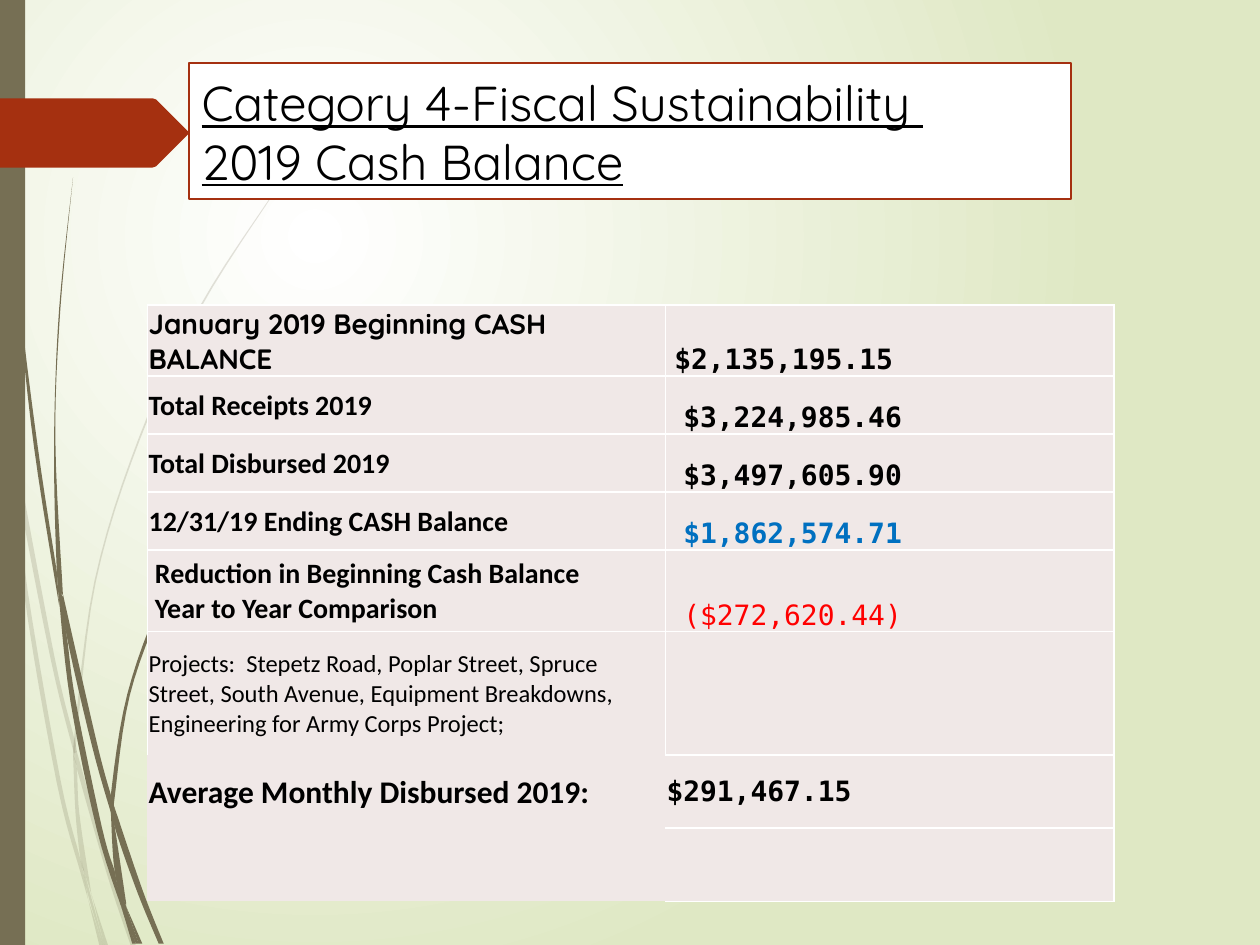
from lxml import etree
from pptx import Presentation
from pptx.dml.color import RGBColor
from pptx.enum.shapes import MSO_SHAPE
from pptx.enum.text import MSO_ANCHOR, MSO_AUTO_SIZE, PP_ALIGN
from pptx.oxml import parse_xml
from pptx.oxml.ns import nsdecls, qn
from pptx.util import Inches, Pt

RECTANGLE = MSO_SHAPE.RECTANGLE
MIDDLE, BOTTOM = MSO_ANCHOR.MIDDLE, MSO_ANCHOR.BOTTOM
LEFT = PP_ALIGN.LEFT
NO_AUTOFIT = MSO_AUTO_SIZE.NONE

COLORS = {"olive": "766F54", "rust": "A53010", "white": "FFFFFF", "black": "000000",
          "pale_green": "DFE8C4", "cell": "F0E8E7", "blue": "0070C0", "red": "FF0000"}
HEADING_FONT, BODY_FONT, NUMBER_FONT = "Quicksand", "Calibri", "DejaVu Sans Mono"

TITLE = "Category 4-Fiscal Sustainability \v2019 Cash Balance"

# Row height, label paragraphs, label format, amount, amount format
LABEL = {"font": BODY_FONT, "size": 16, "bold": True}
AMOUNT = {"font": NUMBER_FONT, "size": 16, "bold": True, "anchor": BOTTOM}
ROWS = [
    (0.54, ["January 2019 Beginning CASH BALANCE"], {**LABEL, "font": HEADING_FONT},
     " $2,135,195.15", {**AMOUNT, "space_font": HEADING_FONT}),
    (0.46, ["Total Receipts 2019"], LABEL, " $3,224,985.46", AMOUNT),
    (0.46, ["Total Disbursed 2019"], LABEL, " $3,497,605.90", AMOUNT),
    (0.46, ["12/31/19 Ending CASH Balance"], LABEL,
     " $1,862,574.71", {**AMOUNT, "color": "blue"}),
    (0.65, [" Reduction in Beginning Cash Balance", " Year to Year Comparison"], LABEL,
     " ($272,620.44)", {**AMOUNT, "color": "red", "bold": False}),
    (0.98, ["Projects:  Stepetz Road, Poplar Street, Spruce Street, South Avenue, "
            "Equipment Breakdowns, Engineering for Army Corps Project;"],
     {**LABEL, "size": 14, "bold": False}, "", AMOUNT),
    (0.58, ["Average Monthly Disbursed 2019:"], {**LABEL, "size": 18},
     "$291,467.15", {**AMOUNT, "anchor": MIDDLE}),
    (0.58, [""], LABEL, "", AMOUNT),
]
COLUMN_WIDTHS = [4.11, 3.56]
OPEN_BORDERS = {(5, 0): "B", (6, 0): "LRTB", (7, 0): "LRTB", (6, 1): "L", (7, 1): "L"}

# Each grass blade is its two edges, one down and one back up
FAINT_BLADES = [
    ([(0.08, 3.5), (0.06, 3.22), (0, 2.82)], [(0, 2.99), (0.07, 3.44), (0.08, 3.5)]),
    ([(0.1, 3.45), (0.43, 5.2), (0.59, 5.86)],
     [(0.59, 5.99), (0.4, 5.22), (0.12, 3.76), (0.1, 3.45)]),
    ([(0.61, 5.96), (0.64, 6.07), (0.88, 6.92), (1.08, 7.51)],
     [(1.04, 7.51), (0.85, 6.94), (0.61, 6.1)]),
    ([(0.73, 7.11), (0.86, 7.51)], [(0.83, 7.51), (0.73, 7.11)]),
    ([(0.08, 3.5), (0.12, 3.76), (0.22, 4.69), (0.48, 6.19), (0.64, 6.83), (0.7, 7.14)],
     [(0.64, 6.93), (0.45, 6.21), (0.19, 4.7), (0.08, 3.5)]),
    ([(0.58, 5.99), (0.61, 6.1), (0.63, 6.46), (0.72, 7.06), (0.73, 7.11)],
     [(0.67, 6.92), (0.64, 6.83), (0.6, 6.46), (0.58, 5.99)]),
    ([(0.61, 5.96), (0.61, 5.84), (0.76, 4.62), (1.11, 3.49), (1.59, 2.45), (2.17, 1.54)],
     [(2.17, 1.53), (1.58, 2.44), (1.1, 3.48), (0.75, 4.61), (0.59, 5.84), (0.61, 5.96)]),
    ([(0.7, 7.14), (0.79, 7.51)], [(0.82, 7.51), (0.7, 7.14)]),
    ([(0.61, 6.1), (0.61, 5.96), (0.59, 5.86)], [(0.58, 5.99), (0.61, 6.08)]),
    ([(0.65, 6.83), (0.69, 7.07), (0.82, 7.51)], [(0.83, 7.51), (0.67, 6.92), (0.65, 6.83)]),
]
SOLID_BLADES = [
    ([(0.02, 0), (0.05, 1.1), (0.14, 2.33), (0.27, 3.55), (0.47, 4.81)],
     [(0.45, 4.53), (0.3, 3.55), (0.15, 2.32), (0.06, 1.09), (0.03, 0)]),
    ([(0.5, 4.72), (0.53, 5.05), (0.73, 5.92), (0.88, 6.45)],
     [(0.88, 6.31), (0.77, 5.9), (0.5, 4.72)]),
    ([(0.91, 6.41), (0.91, 6.56), (1.09, 7.08), (1.26, 7.49)],
     [(1.3, 7.49), (1.13, 7.06), (0.91, 6.41)]),
    ([(0.47, 4.77), (0.56, 5.57), (0.77, 6.59), (0.97, 7.22)],
     [(0.91, 6.91), (0.81, 6.57), (0.6, 5.56), (0.53, 5.05), (0.47, 4.77)]),
    ([(0.5, 4.72), (0.44, 3.49), (0.48, 2.45), (0.58, 1.41)],
     [(0.58, 1.41), (0.47, 2.45), (0.43, 3.49), (0.45, 4.49), (0.49, 4.72)]),
    ([(1, 7.19), (1.1, 7.49)], [(1.13, 7.49), (1, 7.19)]),
    ([(0.45, 4.49), (0.47, 4.77), (0.53, 5.05)], [(0.5, 4.72), (0.49, 4.72), (0.45, 4.49)]),
    ([(0.91, 6.41), (0.91, 6.33), (1.03, 5.52), (1.31, 4.76), (1.69, 4.06), (2.16, 3.44)],
     [(2.15, 3.44), (1.68, 4.05), (1.29, 4.74), (1.01, 5.51), (0.88, 6.31), (0.91, 6.41)]),
    ([(0.97, 7.22), (1.05, 7.49)], [(1.08, 7.49), (0.97, 7.22)]),
    ([(0.88, 6.45), (0.91, 6.91), (1, 7.19)], [(1, 7.16), (0.91, 6.56), (0.88, 6.45)]),
    ([(0.88, 6.45), (0.91, 6.56)], [(0.91, 6.41), (0.88, 6.31)]),
    ([(0.91, 6.91), (0.97, 7.22), (1.08, 7.49)], [(1.1, 7.49), (1, 7.19), (0.91, 6.91)]),
]
ARROW = [(0, 0.78), (1.21, 0.78), (1.24, 0.79), (1.49, 1.04), (1.5, 1.055),
         (1.49, 1.07), (1.24, 1.32), (1.21, 1.33), (0, 1.33)]


def rgb(name):
    return RGBColor.from_string(COLORS[name])


def smooth(points, steps=6):
    """Return points on a Catmull-Rom curve through the given points."""
    padded = [points[0], *points, points[-1]]
    curve = [points[0]]
    for a, b, c, d in zip(padded, padded[1:], padded[2:], padded[3:]):
        for step in range(1, steps + 1):
            t = step / steps
            curve.append(tuple(
                (2 * q + (r - p) * t + (2 * p - 5 * q + 4 * r - s) * t ** 2
                 + (3 * q - p - 3 * r + s) * t ** 3) / 2
                for p, q, r, s in zip(a, b, c, d)))
    return curve


def paint(shape, color, opacity=100):
    shape.shadow.inherit = False
    shape.fill.solid()
    shape.fill.fore_color.rgb = rgb(color)
    shape.line.fill.background()
    if opacity < 100:
        color_element = shape._element.spPr.find(".//" + qn("a:srgbClr"))
        etree.SubElement(color_element, qn("a:alpha"), val=str(opacity * 1000))


def add_outline(shapes, points, color, opacity=100):
    corners = [(Inches(x), Inches(y)) for x, y in points]
    builder = shapes.build_freeform(*corners[0])
    builder.add_line_segments(corners[1:], close=True)
    paint(builder.convert_to_shape(), color, opacity)


def add_text(paragraph, text, font, size, color="black", bold=False, underline=False):
    paragraph.alignment = LEFT
    for index, line in enumerate(text.split("\v")):
        if index:
            paragraph.add_line_break()
        run = paragraph.add_run()
        run.text = line
        run.font.name, run.font.size = font, Pt(size)
        run.font.bold, run.font.underline = bold, underline
        run.font.color.rgb = rgb(color)


def set_borders(cell, open_sides):
    properties = cell._tc.get_or_add_tcPr()
    for index, side in enumerate("LRTB"):
        line = etree.Element(qn("a:ln" + side), w=str(Pt(1)))
        if side in open_sides:
            etree.SubElement(line, qn("a:noFill"))
        else:
            fill = etree.SubElement(line, qn("a:solidFill"))
            etree.SubElement(fill, qn("a:srgbClr"), val=COLORS["white"])
        properties.insert(index, line)


def fill_cell(cell, lines, anchor=MIDDLE, space_font=None, **text_format):
    cell.margin_left = cell.margin_right = cell.margin_top = Inches(0.01)
    cell.margin_bottom = 0
    cell.vertical_anchor = anchor
    cell.fill.solid()
    cell.fill.fore_color.rgb = rgb("cell")
    for index, line in enumerate(lines):
        frame = cell.text_frame
        paragraph = frame.add_paragraph() if index else frame.paragraphs[0]
        if space_font:
            add_text(paragraph, " ", **{**text_format, "font": space_font})
            line = line.lstrip()
        if line:
            add_text(paragraph, line, **text_format)


def set_background(slide):
    stops = "".join(f'<a:gs pos="{position}"><a:srgbClr val="{COLORS[name]}"/></a:gs>'
                    for position, name in ((0, "white"), (100000, "pale_green")))
    slide._element.cSld.insert(0, parse_xml(
        f'<p:bg {nsdecls("p", "a")}><p:bgPr><a:gradFill rotWithShape="1">'
        f'<a:gsLst>{stops}</a:gsLst><a:path path="circle">'
        '<a:fillToRect l="50000" t="50000" r="100000" b="100000"/></a:path>'
        '</a:gradFill><a:effectLst/></p:bgPr></p:bg>'))


def add_decoration(slide):
    for blades, opacity in ((FAINT_BLADES, 20), (SOLID_BLADES, 100)):
        group = slide.shapes.add_group_shape()
        for down, back in blades:
            add_outline(group.shapes, smooth(down) + smooth(back), "olive", opacity)
    paint(slide.shapes.add_shape(RECTANGLE, 0, 0, Inches(0.2), Inches(7.5)), "olive")
    add_outline(slide.shapes, ARROW, "rust")


def format_title(slide):
    title = slide.shapes.title
    slide.shapes._spTree.append(title._element)  # in front of the grass
    title.left, title.top = Inches(1.5), Inches(0.5)
    title.width, title.height = Inches(7), Inches(1.08)
    title.fill.solid()
    title.fill.fore_color.rgb = rgb("white")
    title.line.color.rgb = rgb("rust")
    title.line.width = Pt(1.25)
    frame = title.text_frame
    frame.word_wrap, frame.auto_size, frame.vertical_anchor = True, NO_AUTOFIT, MIDDLE
    add_text(frame.paragraphs[0], TITLE, HEADING_FONT, 28, underline=True)


def add_balance_table(slide):
    table = slide.shapes.add_table(
        len(ROWS), len(COLUMN_WIDTHS), Inches(1.17), Inches(2.42),
        Inches(sum(COLUMN_WIDTHS)), Inches(sum(row[0] for row in ROWS))).table
    table.first_row = table.horz_banding = False
    for column, width in zip(table.columns, COLUMN_WIDTHS):
        column.width = Inches(width)
    for index, (height, labels, label_format, amount, amount_format) in enumerate(ROWS):
        table.rows[index].height = Inches(height)
        fill_cell(table.cell(index, 0), labels, **label_format)
        fill_cell(table.cell(index, 1), [amount], **amount_format)
        for column in range(len(COLUMN_WIDTHS)):
            set_borders(table.cell(index, column), OPEN_BORDERS.get((index, column), ""))


presentation = Presentation()
presentation.slide_width, presentation.slide_height = Inches(10), Inches(7.5)
slide = presentation.slides.add_slide(presentation.slide_layouts[5])
set_background(slide)
add_decoration(slide)
format_title(slide)
add_balance_table(slide)
presentation.save("out.pptx")
